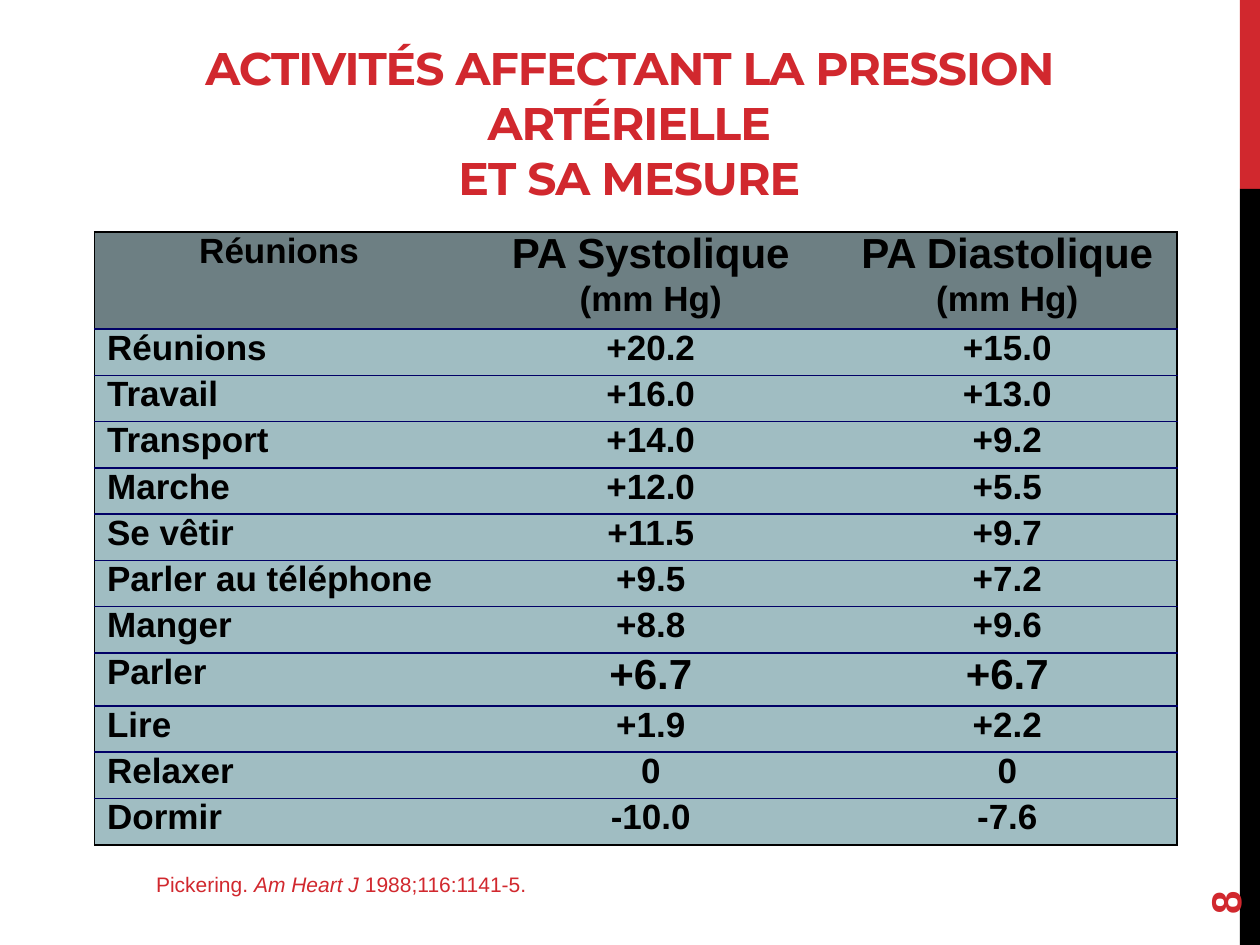
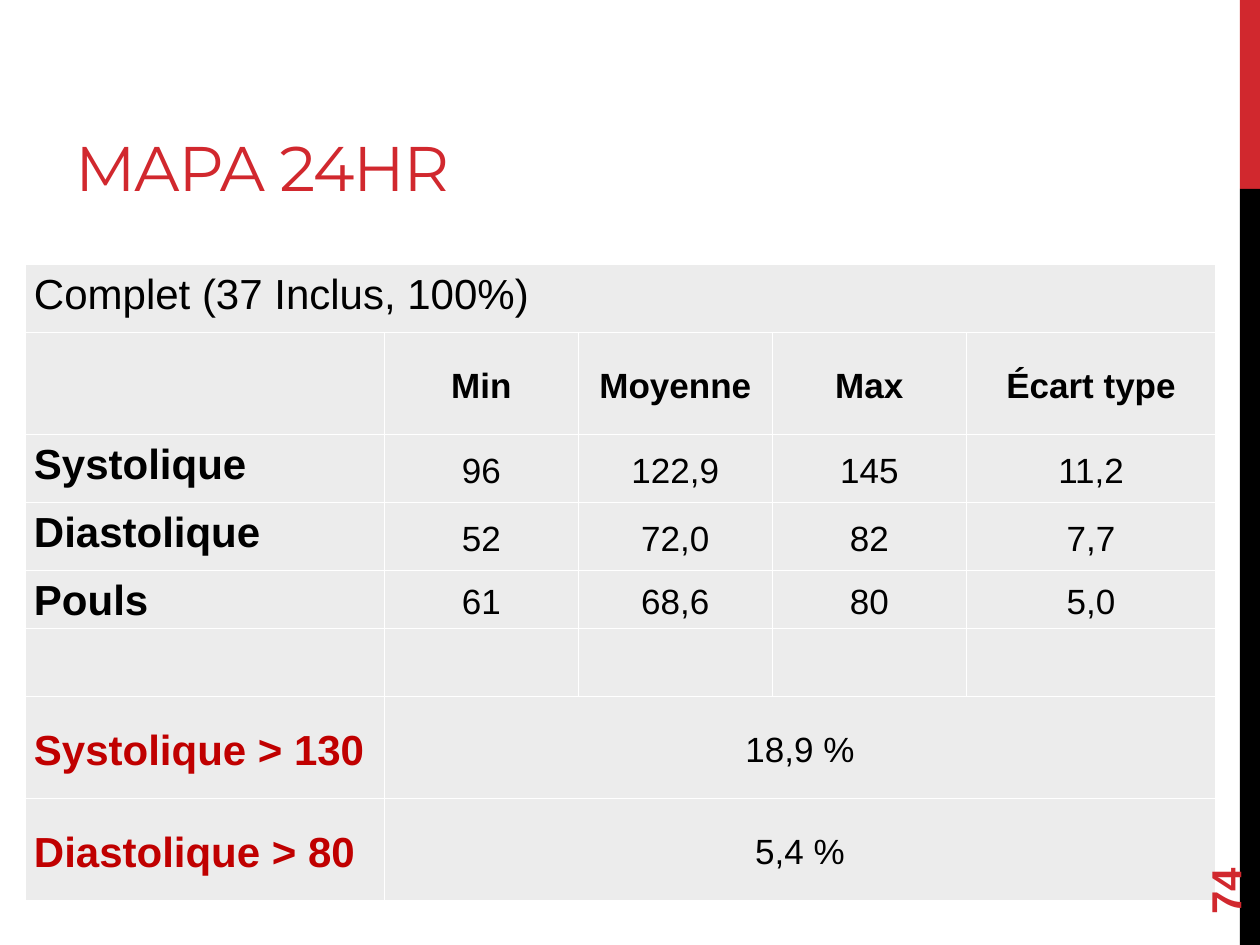
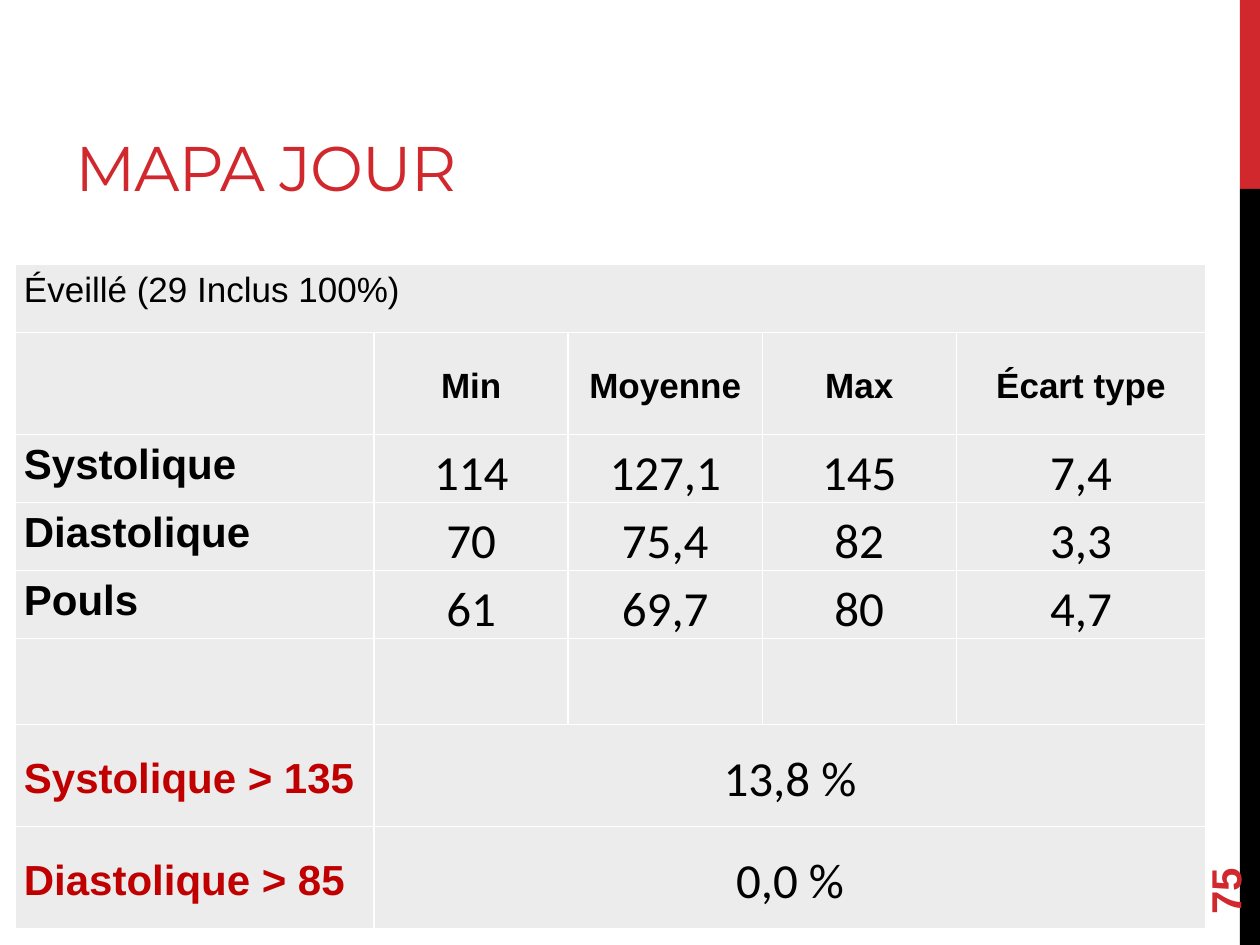
"""Build three slides on blood pressure: activities, 24-hour and daytime readings."""
from lxml import etree
from pptx import Presentation
from pptx.dml.color import RGBColor
from pptx.enum.shapes import MSO_SHAPE
from pptx.enum.text import MSO_ANCHOR, PP_ALIGN
from pptx.oxml.ns import qn
from pptx.util import Pt

PX = 9144
RECTANGLE = MSO_SHAPE.RECTANGLE
TOP, MIDDLE, BOTTOM = MSO_ANCHOR.TOP, MSO_ANCHOR.MIDDLE, MSO_ANCHOR.BOTTOM
LEFT, CENTER = PP_ALIGN.LEFT, PP_ALIGN.CENTER

RED, DARK_RED, BLACK, WHITE = "D1282E", "C00000", "000000", "FFFFFF"
NAVY, SLATE, TEAL, GREY = "000066", "6D7F83", "A0BDC2", "ECECEC"
BODY_FONT, TITLE_FONT = "Arial", "Montserrat"


def write(para, text, size, color=BLACK, font=BODY_FONT, bold=False, italic=False):
    """Add one styled run to a paragraph and return it."""
    span = para.add_run()
    span.text = text
    span.font.size = Pt(size)
    span.font.name = font
    span.font.bold = bold
    span.font.italic = italic
    span.font.color.rgb = RGBColor.from_string(color)
    return span


def style_cell(cell, fill, left, right, top, bottom):
    """Fill a cell and draw its four borders, None meaning no line."""
    properties = cell._tc.get_or_add_tcPr()
    for tag, color in (("a:lnL", left), ("a:lnR", right), ("a:lnT", top), ("a:lnB", bottom)):
        line = etree.SubElement(properties, qn(tag), w="12700")
        if color:
            paint = etree.SubElement(line, qn("a:solidFill"))
            etree.SubElement(paint, qn("a:srgbClr"), val=color)
        else:
            etree.SubElement(line, qn("a:noFill"))
    cell.fill.solid()
    cell.fill.fore_color.rgb = RGBColor.from_string(fill)


deck = Presentation()
deck.slide_width, deck.slide_height = 1000 * PX, 750 * PX

BANDS = [(0, 150, RED), (150, 600, BLACK)]
ACTIVITIES = [
    ("Réunions", "+20.2", "+15.0"),
    ("Travail", "+16.0", "+13.0"),
    ("Transport", "+14.0", "+9.2"),
    ("Marche", "+12.0", "+5.5"),
    ("Se vêtir", "+11.5", "+9.7"),
    ("Parler au téléphone", "+9.5", "+7.2"),
    ("Manger", "+8.8", "+9.6"),
    ("Parler", "+6.7", "+6.7"),
    ("Lire", "+1.9", "+2.2"),
    ("Relaxer", "0", "0"),
    ("Dormir", "-10.0", "-7.6"),
]
READING_HEADER = ["", "Min", "Moyenne", "Max", "Écart type"]
READINGS_24H = [
    ["Complet (37 Inclus, 100%)"],
    READING_HEADER,
    ["Systolique", "96", "122,9", "145", "11,2"],
    ["Diastolique", "52", "72,0", "82", "7,7"],
    ["Pouls", "61", "68,6", "80", "5,0"],
    [""] * 5,
    ["Systolique > 130", "18,9 %"],
    ["Diastolique > 80", "5,4 %"],
]
READINGS_DAY = [
    ["Éveillé (29 Inclus 100%)"],
    READING_HEADER,
    ["Systolique", "114", "127,1", "145", "7,4"],
    ["Diastolique", "70", "75,4", "82", "3,3"],
    ["Pouls", "61", "69,7", "80", "4,7"],
    [""] * 5,
    ["Systolique > 135", "13,8 %"],
    ["Diastolique > 85", "0,0 %"],
]
ACTIVITY_TITLE = ["ACTIVITÉS AFFECTANT LA PRESSION ARTÉRIELLE", "ET SA MESURE"]
PAGES = [
    (ACTIVITY_TITLE, 899, 26.1, True, CENTER, "8",
     (75, 184), [293, 297, 269], [64] + [34] * 11),
    (["MAPA 24HR"], 633, 36, False, LEFT, "74",
     (20, 210), [285, 154, 154, 154, 198], [54, 81, 54, 54, 42, 54, 81, 81]),
    (["MAPA JOUR"], 633, 36, False, LEFT, "75",
     (12, 210), [285, 154, 154, 154, 198], [54, 81, 54, 54, 54, 68, 81, 81]),
]

pages, tables = [], []
for lines, title_width, title_size, bold, align, number, corner, widths, heights in PAGES:
    page = deck.slides.add_slide(deck.slide_layouts[6])
    pages.append(page)

    for band_top, band_height, color in BANDS:
        band = page.shapes.add_shape(RECTANGLE, 984 * PX, band_top * PX, 16 * PX, band_height * PX)
        band.shadow.inherit = False
        band.fill.solid()
        band.fill.fore_color.rgb = RGBColor.from_string(color)
        band.line.fill.background()

    title = page.shapes.add_textbox(50 * PX, 17 * PX, title_width * PX, 150 * PX)
    title.text_frame.word_wrap = True
    title.text_frame.vertical_anchor = BOTTOM
    para = title.text_frame.paragraphs[0]
    para.alignment = align
    for index, line in enumerate(lines):
        if index:
            para.add_line_break()
        span = write(para, line, title_size, RED, TITLE_FONT, bold)
        span.font._element.set("spc", "-60")

    frame = page.shapes.add_table(len(heights), len(widths), corner[0] * PX, corner[1] * PX,
                                  sum(widths) * PX, sum(heights) * PX)
    table = frame.table
    table.first_row = table.horz_banding = False
    for column, width in zip(table.columns, widths):
        column.width = width * PX
    for row, height in zip(table.rows, heights):
        row.height = height * PX
    tables.append(table)

    page_number = page.shapes.add_textbox(900 * PX, 644 * PX, 144 * PX, 40 * PX)
    page_number.rotation = 270
    page_number.text_frame.word_wrap = True
    page_number.text_frame.vertical_anchor = MIDDLE
    write(page_number.text_frame.paragraphs[0], number, 24, RED, bold=True)

activity_table = tables[0]
last_row, last_column = len(ACTIVITIES), 2
for r in range(last_row + 1):
    for c in range(last_column + 1):
        style_cell(activity_table.cell(r, c), TEAL if r else SLATE,
                   BLACK if c == 0 else None, BLACK if c == last_column else None,
                   NAVY if r else BLACK, BLACK if r == last_row else NAVY)

for c, heading in enumerate(["Réunions", "PA Systolique", "PA Diastolique"]):
    text_frame = activity_table.cell(0, c).text_frame
    para = text_frame.paragraphs[0]
    para.alignment, para.line_spacing = CENTER, 0.8
    write(para, heading, 24 if c else 20, bold=True)
    if c:
        para = text_frame.add_paragraph()
        para.alignment, para.line_spacing, para.space_before = CENTER, 0.8, Pt(6)
        write(para, "(mm Hg)", 20, bold=True)

for r, activity in enumerate(ACTIVITIES, 1):
    for c, text in enumerate(activity):
        para = activity_table.cell(r, c).text_frame.paragraphs[0]
        para.alignment, para.line_spacing = CENTER if c else LEFT, 0.8
        write(para, text, 24 if c and activity[0] == "Parler" else 20, bold=True)

source = pages[0].shapes.add_textbox(114 * PX, 687 * PX, 619 * PX, 30 * PX)
source.text_frame.word_wrap = True
para = source.text_frame.paragraphs[0]
write(para, "Pickering. ", 12, RED)
write(para, "Am Heart J ", 12, RED, italic=True)
write(para, "1988;116:1141-5.", 12, RED)

READING_TABLES = [
    (tables[1], READINGS_24H, 24, 20, BODY_FONT),
    (tables[2], READINGS_DAY, 20, 28, "Calibri"),
]
for table, readings, caption_size, value_size, value_font in READING_TABLES:
    for r, texts in enumerate(readings):
        for c in range(5):
            style_cell(table.cell(r, c), GREY, WHITE, WHITE, WHITE, WHITE)
        if len(texts) < 5:
            table.cell(r, len(texts) - 1).merge(table.cell(r, 4))
        for c, text in enumerate(texts):
            if not text:
                continue
            cell = table.cell(r, c)
            cell.margin_left = cell.margin_right = 7 * PX
            cell.margin_top = cell.margin_bottom = 0
            cell.vertical_anchor = MIDDLE if c or r > 5 else TOP
            para = cell.text_frame.paragraphs[0]
            para.alignment, para.line_spacing = CENTER if c else LEFT, 1.15
            if r == 0:
                write(para, text, caption_size)
            elif r == 1:
                write(para, text, 20, bold=True)
            elif c == 0:
                write(para, text, 24, DARK_RED if r > 5 else BLACK, bold=True)
            else:
                write(para, text, value_size, font=value_font)

deck.save("out.pptx")
